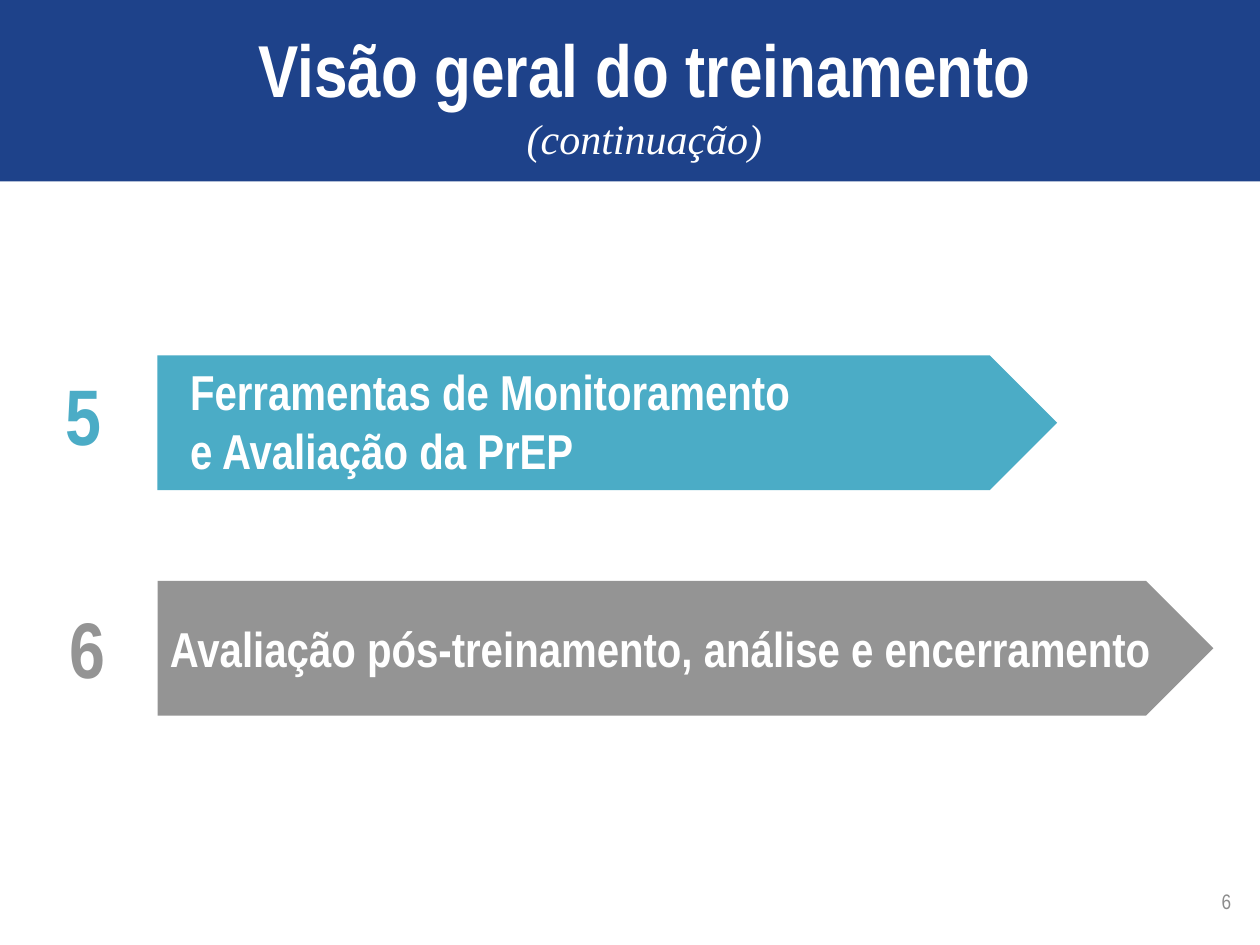
"""Build the training overview slide with two numbered arrows."""
from pptx import Presentation
from pptx.dml.color import RGBColor
from pptx.enum.shapes import MSO_SHAPE
from pptx.enum.text import MSO_ANCHOR, PP_ALIGN
from pptx.util import Inches, Pt

RECT, ARROW = MSO_SHAPE.RECTANGLE, MSO_SHAPE.PENTAGON
TOP, MID = MSO_ANCHOR.TOP, MSO_ANCHOR.MIDDLE
LEFT, CENTER, RIGHT = PP_ALIGN.LEFT, PP_ALIGN.CENTER, PP_ALIGN.RIGHT
SANS, SERIF = "Arial Narrow", "Times New Roman"
WHITE, NAVY, TEAL, GRAY = "FFFFFF", "1E428A", "4BACC6", "949494"

deck = Presentation()
deck.slide_width, deck.slide_height = Inches(10), Inches(7.5)
slide = deck.slides.add_slide(deck.slide_layouts[6])


def draw(kind, box, color):
    shape = slide.shapes.add_shape(kind, *map(Inches, box))
    shape.shadow.inherit = False
    shape.fill.solid()
    shape.fill.fore_color.rgb = RGBColor.from_string(color)
    shape.line.fill.background()
    return shape


def write(lines, size, color=WHITE, box=None, shape=None, align=LEFT,
          anchor=TOP, bold=True):
    shape = shape or slide.shapes.add_textbox(*map(Inches, box))
    frame = shape.text_frame
    frame.word_wrap = True
    frame.vertical_anchor = anchor
    para = frame.paragraphs[0]
    para.alignment = align
    for i, line in enumerate(lines):
        if i:
            para.add_line_break()
        run = para.add_run()
        run.text = line
        run.font.name, run.font.size, run.font.bold = SANS, Pt(size), bold
        run.font.color.rgb = RGBColor.from_string(color)
    return para


draw(RECT, (0, 0, 10, 1.44), NAVY)
title = write(["Visão geral do treinamento", "(continuação)"], 42,
              box=(0.42, 0.14, 9.39, 1.21), align=CENTER)
note = title.runs[1].font
note.name, note.size, note.bold, note.italic = SERIF, Pt(24), False, True

draw(ARROW, (1.25, 2.82, 7.14, 1.07), TEAL)
write(["Ferramentas de Monitoramento", "e Avaliação da PrEP"], 28,
      box=(1.41, 2.82, 6.08, 1.04))
last = draw(ARROW, (1.25, 4.61, 8.38, 1.07), GRAY)
write(["Avaliação pós-treinamento, análise e encerramento"], 28,
      shape=last, anchor=MID)

for digit, left, top, color in [("5", 0.42, 2.86, TEAL), ("6", 0.45, 4.71, GRAY)]:
    write([digit], 45, color, box=(left, top, 0.63, 0.86))

write(["6"], 12, "8C8C8C", box=(7.54, 6.95, 2.33, 0.4), align=RIGHT,
      anchor=MID, bold=False)

deck.save("out.pptx")
